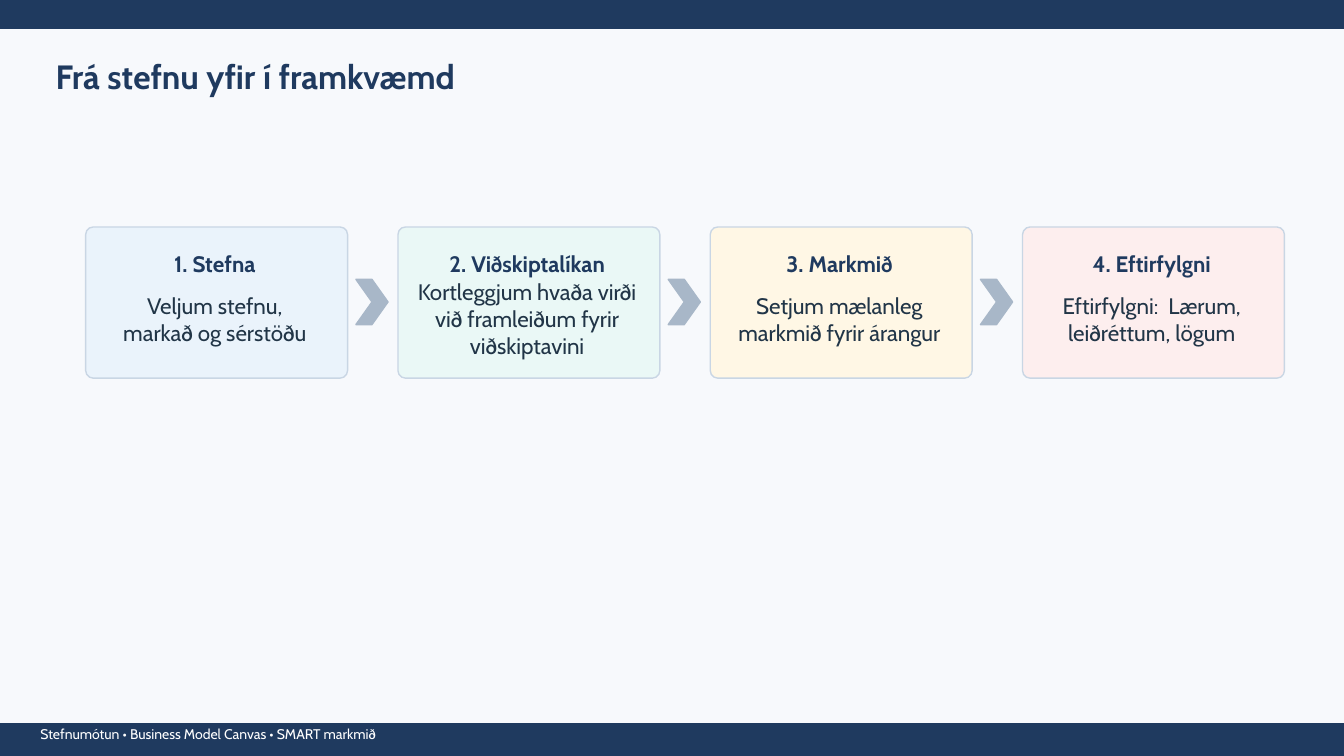
from typing import NamedTuple

from pptx import Presentation
from pptx.dml.color import RGBColor
from pptx.enum.shapes import MSO_SHAPE
from pptx.enum.text import MSO_ANCHOR, PP_ALIGN
from pptx.util import Cm, Pt

WIDTH, HEIGHT = 33.87, 19.05
NAVY, INK, EDGE, ARROW = "1F3A5F", "213547", "C9D6E4", "A8B7C8"
LEFT, TOP, PITCH = 2.16, 5.72, 7.87


class Box(NamedTuple):
    left: float
    top: float
    width: float
    height: float


class Step(NamedTuple):
    title: str
    lines: list[str]
    fill: str


STEPS = [
    Step("1. Stefna", ["Veljum stefnu,", "markað og sérstöðu"], "EAF3FB"),
    Step("2. Viðskiptalíkan",
         ["Kortleggjum hvaða virði við framleiðum fyrir viðskiptavini"], "EAF8F6"),
    Step("3. Markmið", ["Setjum mælanleg markmið fyrir árangur"], "FFF7E5"),
    Step("4. Eftirfylgni", ["Eftirfylgni:  Lærum, leiðréttum, lögum"], "FDEEEE"),
]


def color(code: str) -> RGBColor:
    return RGBColor.from_string(code)


def add_block(slide, kind: MSO_SHAPE, box: Box, fill: str, edge: str):
    shape = slide.shapes.add_shape(kind, *map(Cm, box))
    shape.shadow.inherit = False
    shape.fill.solid()
    shape.fill.fore_color.rgb = color(fill)
    shape.line.color.rgb = color(edge)
    shape.line.width = Pt(1)
    return shape


def add_text(slide, box: Box, lines: list[str], size: int, ink: str,
             bold: bool = False, align: PP_ALIGN = PP_ALIGN.LEFT) -> None:
    frame = slide.shapes.add_textbox(*map(Cm, box)).text_frame
    layout = {"word_wrap": True, "vertical_anchor": MSO_ANCHOR.MIDDLE,
              "margin_left": 0, "margin_right": 0,
              "margin_top": 0, "margin_bottom": 0}
    for name, value in layout.items():
        setattr(frame, name, value)
    frame.text = "\n".join(lines)
    style = {"name": "Cabin", "size": Pt(size), "bold": bold}
    for para in frame.paragraphs:
        para.alignment = align
        for run in para.runs:
            for name, value in style.items():
                setattr(run.font, name, value)
            run.font.color.rgb = color(ink)


def add_step(slide, step: Step, left: float) -> None:
    card = add_block(slide, MSO_SHAPE.ROUNDED_RECTANGLE,
                     Box(left, TOP, 6.6, 3.81), step.fill, EDGE)
    card.adjustments[0] = 0.05
    add_text(slide, Box(left + 0.46, TOP + 0.58, 5.59, 0.66), [step.title],
             16, NAVY, True, PP_ALIGN.CENTER)
    add_text(slide, Box(left + 0.46, TOP + 1.65, 5.59, 1.32), step.lines,
             16, INK, align=PP_ALIGN.CENTER)


def main() -> None:
    deck = Presentation()
    deck.slide_width, deck.slide_height = Cm(WIDTH), Cm(HEIGHT)
    slide = deck.slides.add_slide(deck.slide_layouts[6])
    slide.background.fill.solid()
    slide.background.fill.fore_color.rgb = color("F7F9FC")

    for top, height in ((0, 0.71), (18.24, 0.81)):
        add_block(slide, MSO_SHAPE.RECTANGLE, Box(0, top, WIDTH, height), NAVY, NAVY)
    add_text(slide, Box(1.02, 18.29, 21.59, 0.41),
             ["Stefnumótun • Business Model Canvas • SMART markmið"], 10, "FFFFFF")
    add_text(slide, Box(1.4, 1.27, 22.35, 1.27),
             ["Frá stefnu yfir í framkvæmd"], 24, NAVY, True)

    for index, step in enumerate(STEPS):
        left = LEFT + index * PITCH
        add_step(slide, step, left)
        if index < len(STEPS) - 1:
            add_block(slide, MSO_SHAPE.CHEVRON,
                      Box(left + 6.81, TOP + 1.32, 0.81, 1.14), ARROW, ARROW)
    deck.save("out.pptx")


if __name__ == "__main__":
    main()
